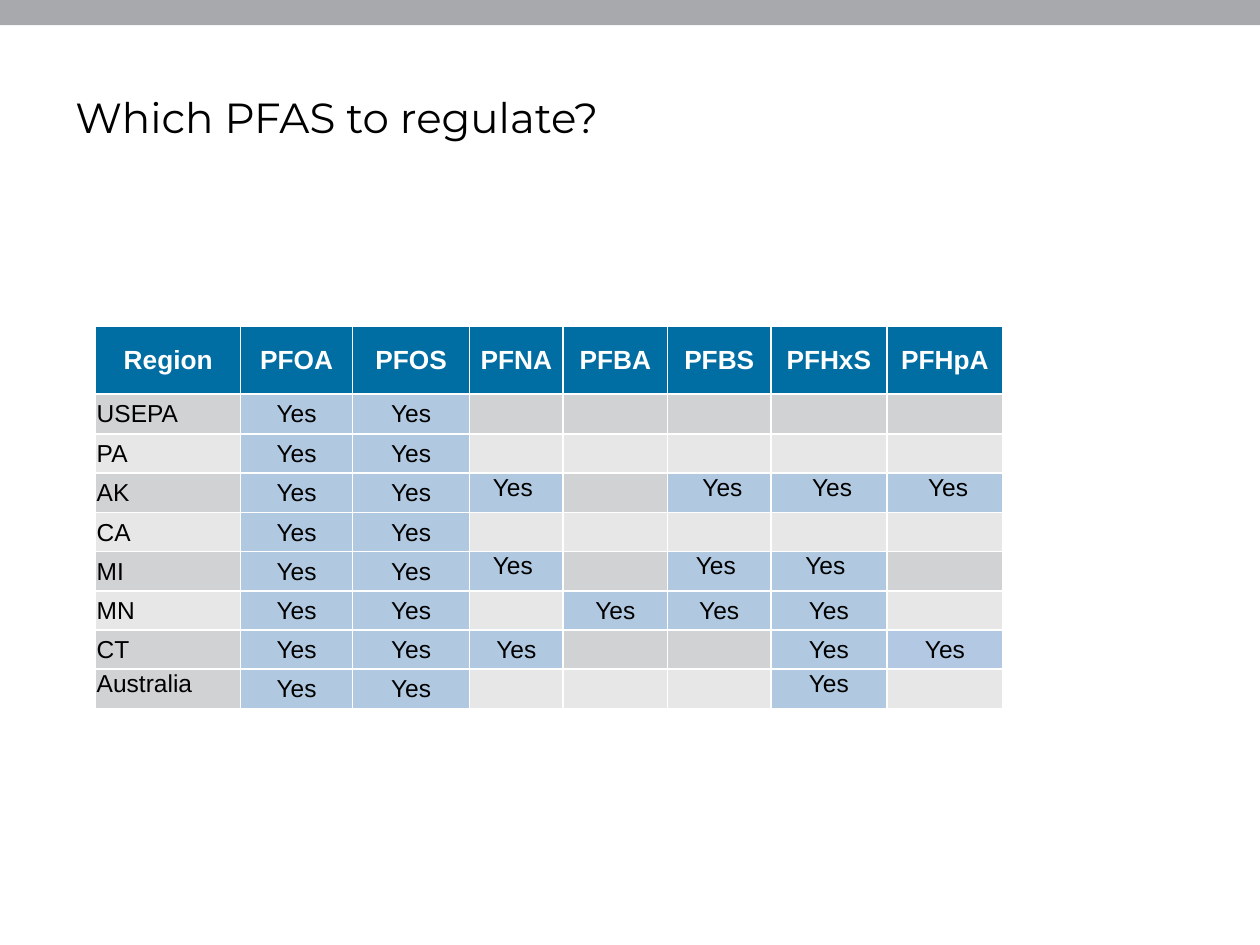
from dataclasses import dataclass
from typing import NamedTuple

from lxml import etree
from pptx import Presentation
from pptx.dml.color import RGBColor
from pptx.enum import shapes, text
from pptx.oxml.ns import qn
from pptx.util import Cm, Pt


@dataclass(frozen=True)
class Theme:
    bar: str = "A7A9AC"
    head: str = "006DA3"
    dark: str = "D1D2D4"
    light: str = "E7E7E8"
    yes: str = "B0C9E0"
    pale: str = "B3C8E3"
    white: str = "FFFFFF"
    black: str = "000000"
    title: float = 24
    label: float = 15
    body: float = 14
    sans: str = "Arial"
    show: str = "Montserrat"


class Row(NamedTuple):
    name: str
    marks: str  # one letter per compound, see MARKS


class Item(NamedTuple):
    words: str
    fill: str
    top: bool = False
    left: bool = False
    head: bool = False


T = Theme()
HEADS = ("Region", "PFOA", "PFOS", "PFNA", "PFBA", "PFBS", "PFHxS", "PFHpA")
WIDTHS = (2.92, 2.26, 2.36, 1.88, 2.11, 2.08, 2.34, 2.34)
HEIGHTS = (1.36, 0.81) + (0.79,) * 7
ROWS = (
    Row("USEPA", "YY....."),
    Row("PA", "YY....."),
    Row("AK", "YY<.>>>"),
    Row("CA", "YY....."),
    Row("MI", "YY<.<<."),
    Row("MN", "YY.YYY."),
    Row("CT", "YYY..YP"),
    Row("Australia", "YY...^."),
)
MARKS = {
    "Y": Item("Yes", T.yes),
    "P": Item("Yes", T.pale),
    "<": Item("Yes ", T.yes, top=True),
    ">": Item(" Yes", T.yes, top=True),
    "^": Item("Yes", T.yes, top=True),
}


def write(para, words: str, size: float, face: str, hue: str, bold: bool = False) -> None:
    run = para.add_run()
    run.text = words
    run.font.size, run.font.name, run.font.bold = Pt(size), face, bold
    run.font.color.rgb = RGBColor.from_string(hue)


def edge(cell, side: str, width: float) -> None:
    line = etree.SubElement(cell._tc.get_or_add_tcPr(), qn(f"a:ln{side}"), w=str(Pt(width)))
    fill = etree.SubElement(line, qn("a:solidFill"))
    etree.SubElement(fill, qn("a:srgbClr"), val=T.white)


def draw(cell, item: Item, row: int) -> None:
    """Style and fill one table cell; the rule under the heads is thicker."""
    thick = {"T": 1, "B": 0}
    for side in "LRTB":
        edge(cell, side, 1.5 if thick.get(side) == row else 1)
    cell.fill.solid()
    cell.fill.fore_color.rgb = RGBColor.from_string(item.fill)
    cell.margin_left = cell.margin_right = cell.margin_top = Cm(0.02)
    cell.margin_bottom = 0
    cell.vertical_anchor = text.MSO_ANCHOR.TOP if item.top else text.MSO_ANCHOR.MIDDLE
    para = cell.text_frame.paragraphs[0]
    para.alignment = text.PP_ALIGN.LEFT if item.left else text.PP_ALIGN.CENTER
    if not item.words:
        etree.SubElement(para._p, qn("a:endParaRPr"), sz=str(int(T.body * 100)))
    elif item.head:
        write(para, item.words, T.label, T.sans, T.white, True)
    else:
        write(para, item.words, T.body, T.sans, T.black)


def grid() -> list[list[Item]]:
    """All table cells, heads first, with alternating row shades."""
    rows = [[Item(name, T.head, head=True) for name in HEADS]]
    for num, row in enumerate(ROWS):
        shade = T.light if num % 2 else T.dark
        last = row is ROWS[-1]
        name = Item(row.name, T.dark if last else shade, top=last, left=True)
        rows.append([name] + [MARKS.get(mark, Item("", shade)) for mark in row.marks])
    return rows


def main() -> None:
    deck = Presentation()
    deck.slide_width, deck.slide_height = Cm(25.4), Cm(19.05)
    slide = deck.slides.add_slide(deck.slide_layouts[6])

    bar = slide.shapes.add_shape(shapes.MSO_SHAPE.RECTANGLE, 0, 0, deck.slide_width, Cm(0.51))
    bar.shadow.inherit = False
    bar.fill.solid()
    bar.fill.fore_color.rgb = RGBColor.from_string(T.bar)
    bar.line.fill.background()

    title = slide.shapes.add_textbox(Cm(1.27), Cm(0.76), Cm(22.86), Cm(3.18)).text_frame
    title.word_wrap = True
    title.vertical_anchor = text.MSO_ANCHOR.MIDDLE
    write(title.paragraphs[0], "Which PFAS to regulate?", T.title, T.show, T.black)

    table = slide.shapes.add_table(
        len(HEIGHTS), len(WIDTHS), Cm(1.93), Cm(6.58), Cm(sum(WIDTHS)), Cm(sum(HEIGHTS))
    ).table
    table.horz_banding = False
    for col, width in zip(table.columns, WIDTHS):
        col.width = Cm(width)
    for row, height in zip(table.rows, HEIGHTS):
        row.height = Cm(height)
    for num, items in enumerate(grid()):
        for col, item in enumerate(items):
            draw(table.cell(num, col), item, num)

    deck.save("out.pptx")


if __name__ == "__main__":
    main()
